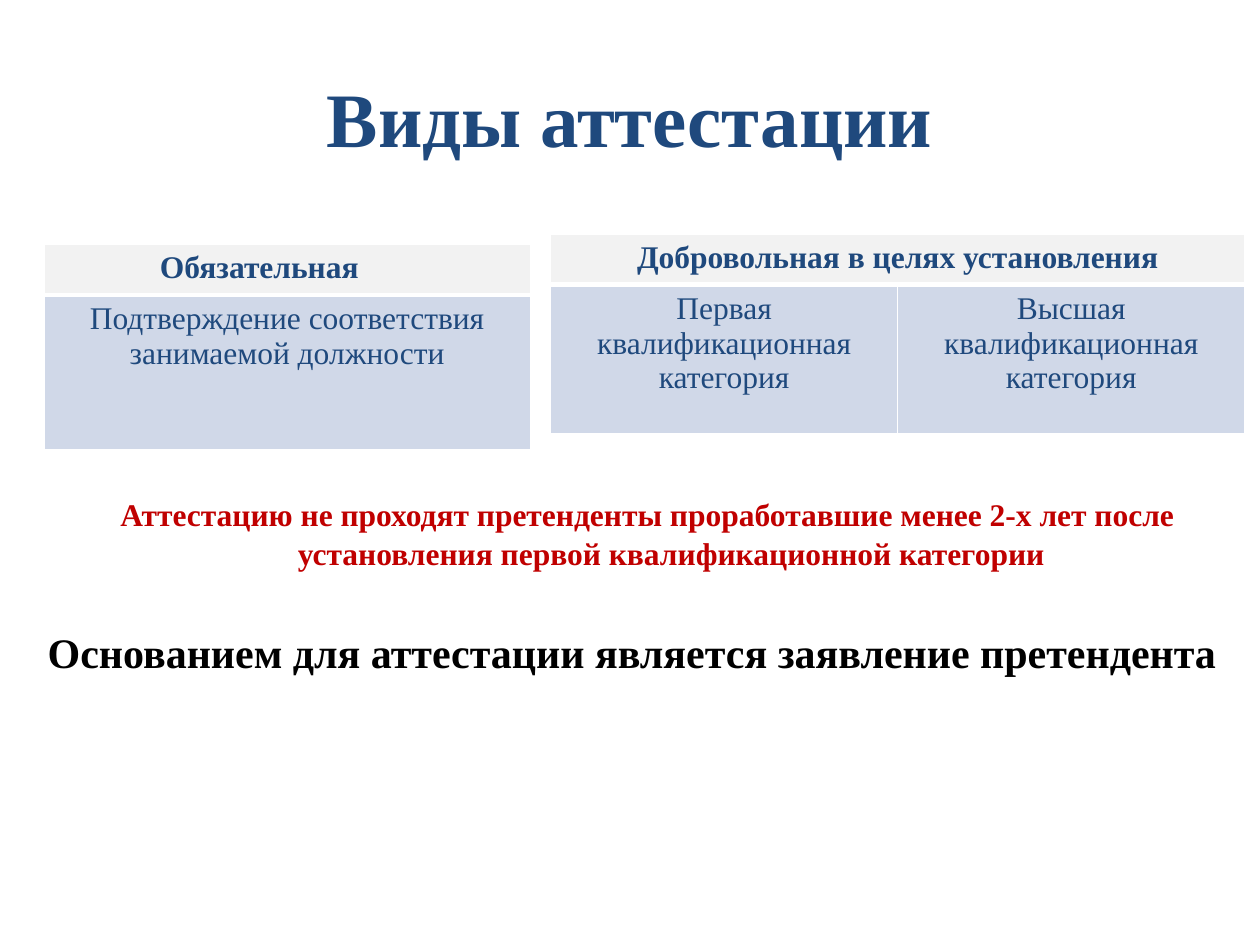
import pptx
import pptx.dml.color
import pptx.enum.text
import pptx.oxml
import pptx.oxml.ns
import pptx.util

COLORS = {
    "heading": "1F497D",
    "warning": "C00000",
    "basis": "000000",
    "header_fill": "F2F2F2",
    "body_fill": "D0D8E8",
    "border": "FFFFFF",
}
FONT = "Times New Roman"
ALIGN = pptx.enum.text.PP_ALIGN
ANCHOR = pptx.enum.text.MSO_ANCHOR
WIDTH = pptx.util.Inches(10)
HEIGHT = pptx.util.Inches(7.5)


def across(percent):
    return round(WIDTH * percent / 100)


def down(percent):
    return round(HEIGHT * percent / 100)


def write(paragraph, text, size=18, color="heading", bold=False,
          align=ALIGN.CENTER, before=0, spacing=None, hanging=0):
    paragraph.alignment = align
    paragraph.space_before = pptx.util.Pt(before)
    if spacing:
        paragraph.line_spacing = spacing
    if hanging:
        properties = paragraph._p.get_or_add_pPr()
        properties.set("marL", str(across(hanging)))
        properties.set("indent", str(-across(hanging)))
    run = paragraph.add_run()
    run.text = text
    run.font.name = FONT
    run.font.size = pptx.util.Pt(size)
    run.font.bold = bold
    run.font.color.rgb = pptx.dml.color.RGBColor.from_string(COLORS[color])


def add_text_frame(slide, box, anchor):
    left, top, width, height = box
    shape = slide.shapes.add_textbox(
        across(left), down(top), across(width), down(height))
    frame = shape.text_frame
    frame.word_wrap = True
    frame.vertical_anchor = anchor
    return frame


def add_title(slide, box):
    frame = add_text_frame(slide, box, ANCHOR.MIDDLE)
    write(frame.paragraphs[0], "Виды аттестации", size=44, bold=True)


def add_notice(slide, box):
    frame = add_text_frame(slide, box, ANCHOR.TOP)
    write(frame.paragraphs[0],
          "Аттестацию не проходят претенденты проработавшие менее 2-х лет "
          "после установления первой квалификационной категории",
          color="warning", bold=True, spacing=1.05, hanging=3.75)
    write(frame.add_paragraph(),
          "Основанием для аттестации является заявление претендента",
          size=24, color="basis", bold=True, align=ALIGN.LEFT,
          before=31, hanging=3.75)


def set_borders(cell, top, bottom):
    properties = cell._tc.get_or_add_tcPr()
    sides = (("L", 1), ("R", 1), ("T", top), ("B", bottom))
    for position, (side, points) in enumerate(sides):
        line = pptx.oxml.parse_xml(
            f'<a:ln{side} {pptx.oxml.ns.nsdecls("a")} '
            f'w="{pptx.util.Pt(points)}"><a:solidFill>'
            f'<a:srgbClr val="{COLORS["border"]}"/></a:solidFill></a:ln{side}>')
        properties.insert(position, line)


def style_cell(cell, fill, top, bottom):
    cell.fill.solid()
    cell.fill.fore_color.rgb = pptx.dml.color.RGBColor.from_string(COLORS[fill])
    set_borders(cell, top, bottom)


def add_kind_table(slide, box, header, categories,
                   header_align=ALIGN.CENTER, header_inset=1):
    left, top, width, header_height, body_height = box
    count = len(categories)
    table = slide.shapes.add_table(
        2, count, across(left), down(top), across(width),
        down(header_height + body_height)).table
    table.first_row = False
    table.horz_banding = False
    table.rows[0].height = down(header_height)
    table.rows[1].height = down(body_height)
    for index, lines in enumerate(categories):
        table.columns[index].width = across(width / count)
        style_cell(table.cell(0, index), "header_fill", 1, 3)
        cell = table.cell(1, index)
        style_cell(cell, "body_fill", 3, 1)
        frame = cell.text_frame
        for number, text in enumerate(lines):
            paragraph = frame.add_paragraph() if number else frame.paragraphs[0]
            write(paragraph, text)
    title_cell = table.cell(0, 0)
    if count > 1:
        title_cell.merge(table.cell(0, count - 1))
    title_cell.margin_left = across(header_inset)
    write(title_cell.text_frame.paragraphs[0], header,
          bold=True, align=header_align)


def main():
    presentation = pptx.Presentation()
    presentation.slide_width = WIDTH
    presentation.slide_height = HEIGHT
    slide = presentation.slides.add_slide(presentation.slide_layouts[6])
    add_title(slide, (5, 4, 90, 16.67))
    add_notice(slide, (2.8, 51.5, 97.2, 37.83))
    add_kind_table(
        slide, (43.7, 24.8, 55.1, 5.07, 15.73),
        "Добровольная в целях установления",
        [["Первая квалификационная категория"],
         ["Высшая квалификационная категория"]])
    add_kind_table(
        slide, (3.5, 25.87, 38.6, 5.07, 16.4), "Обязательная",
        [["Подтверждение соответствия", "занимаемой должности"]],
        header_align=ALIGN.LEFT, header_inset=9.2)
    presentation.save("out.pptx")


if __name__ == "__main__":
    main()
